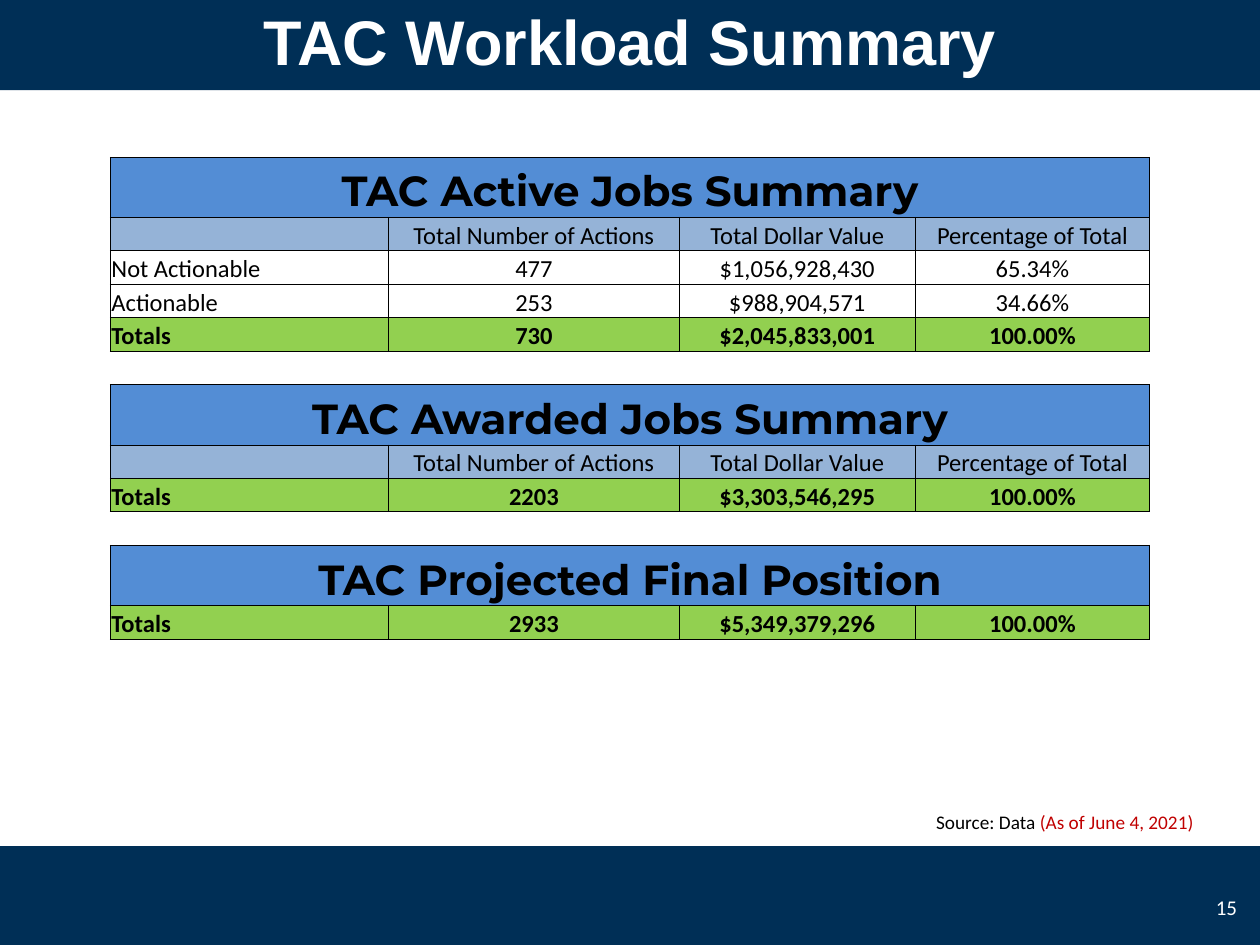
from lxml.etree import SubElement
from pptx import Presentation
from pptx.dml.color import RGBColor
from pptx.enum.shapes import MSO_SHAPE
from pptx.enum.text import MSO_ANCHOR, PP_ALIGN
from pptx.oxml.ns import qn
from pptx.util import Pt

HEX = {"navy": "002F56", "white": "FFFFFF", "black": "000000", "red": "C00000",
       "blue": "538DD5", "pale": "95B3D7", "green": "92D050"}
LEFT, MID, RIGHT = PP_ALIGN.LEFT, PP_ALIGN.CENTER, PP_ALIGN.RIGHT


def write(para, text, color, **form):
    """Add a run and set its font from the format values."""
    run = para.add_run()
    run.text = text
    run.font.color.rgb = RGBColor.from_string(HEX[color])
    for key, value in form.items():
        setattr(run.font, key, value)


def edge(cell, sides, color=None):
    """Draw the named cell borders, or hide them when no colour is given."""
    props = cell._tc.get_or_add_tcPr()
    for side in sides:
        line = SubElement(props, qn("a:ln" + side), w=str(Pt(0.5)))
        if color:
            fill = SubElement(line, qn("a:solidFill"))
            SubElement(fill, qn("a:srgbClr"), val=HEX[color])
        else:
            SubElement(line, qn("a:noFill"))


deck = Presentation()
deck.slide_width, deck.slide_height = Pt(720), Pt(540)
slide = deck.slides.add_slide(deck.slide_layouts[6])
shapes = slide.shapes

# Top and bottom bands
for top in (483.6, -6):
    band = shapes.add_shape(MSO_SHAPE.RECTANGLE, 0, Pt(top), Pt(720), Pt(57.6))
    band.shadow.inherit = False
    band.fill.solid()
    band.fill.fore_color.rgb = RGBColor.from_string(HEX["navy"])
    band.line.fill.background()

# Title, page number and source note
title = {"name": "Arial", "size": Pt(36), "bold": True}
page = {"name": "Calibri", "size": Pt(12)}
note = {"name": "Calibri", "size": Pt(11)}
labels = [
    ((0, -6, 720, 57.6), MID, MSO_ANCHOR.MIDDLE, title,
     [("TAC Workload Summary", "white")]),
    ((684, 504, 30, 28.8), RIGHT, MSO_ANCHOR.MIDDLE, page, [("15", "white")]),
    ((527.8, 459.4, 188.6, 20.6), LEFT, MSO_ANCHOR.TOP, note,
     [("Source: Data ", "black"), ("(As of June 4, 2021)", "red")]),
]
for place, align, anchor, form, parts in labels:
    box = shapes.add_textbox(*[Pt(n) for n in place])
    frame = box.text_frame
    frame.word_wrap = True
    frame.vertical_anchor = anchor
    para = frame.paragraphs[0]
    para.alignment = align
    for text, color in parts:
        write(para, text, color, **form)

# Summary table: each row is a kind and its texts
heads = ["", "Total Number of Actions", "Total Dollar Value", "Percentage of Total"]
rows = [
    ("title", ["TAC Active Jobs Summary"]),
    ("head", heads),
    ("body", ["Not Actionable", "477", "$1,056,928,430", "65.34%"]),
    ("body", ["Actionable", "253", "$988,904,571", "34.66%"]),
    ("total", ["Totals", "730", "$2,045,833,001", "100.00%"]),
    ("gap", []),
    ("title", ["TAC Awarded Jobs Summary"]),
    ("head", heads),
    ("total", ["Totals", "2203", "$3,303,546,295", "100.00%"]),
    ("gap", []),
    ("title", ["TAC Projected Final Position"]),
    ("total", ["Totals", "2933", "$5,349,379,296", "100.00%"]),
]
fills = {"title": "blue", "head": "pale", "total": "green"}
plain = {"name": "Calibri", "size": Pt(14), "bold": False}
fonts = {"title": {"name": "Montserrat", "size": Pt(24), "bold": True},
         "total": plain | {"bold": True}}
inset = {"margin_left": Pt(0.7), "margin_right": Pt(0.7), "margin_top": Pt(0.7),
         "margin_bottom": 0, "vertical_anchor": MSO_ANCHOR.BOTTOM}
widths = [159, 166.2, 134.8, 134]

grid = shapes.add_table(len(rows), len(widths), Pt(63), Pt(89.8),
                        Pt(sum(widths)), Pt(276)).table
grid.first_row = grid.horz_banding = False
for col, width in zip(grid.columns, widths):
    col.width = Pt(width)

for r, (kind, texts) in enumerate(rows):
    grid.rows[r].height = Pt(34.4 if kind == "title" else 19.15)
    if kind == "title":
        grid.cell(r, 0).merge(grid.cell(r, len(widths) - 1))
    for c in range(len(widths)):
        cell = grid.cell(r, c)
        for key, value in inset.items():
            setattr(cell, key, value)
        if kind == "gap":
            edge(cell, "LR")
            edge(cell, "TB", "black")
        else:
            edge(cell, "LRTB", "black")
        if kind in fills:
            cell.fill.solid()
            cell.fill.fore_color.rgb = RGBColor.from_string(HEX[fills[kind]])
        else:
            cell.fill.background()
        para = cell.text_frame.paragraphs[0]
        text = texts[c] if c < len(texts) else ""
        if text:
            para.alignment = LEFT if c == 0 and kind != "title" else MID
            write(para, text, "black", **fonts.get(kind, plain))
        else:
            SubElement(para._p, qn("a:endParaRPr"), sz="1400")

deck.save("out.pptx")
